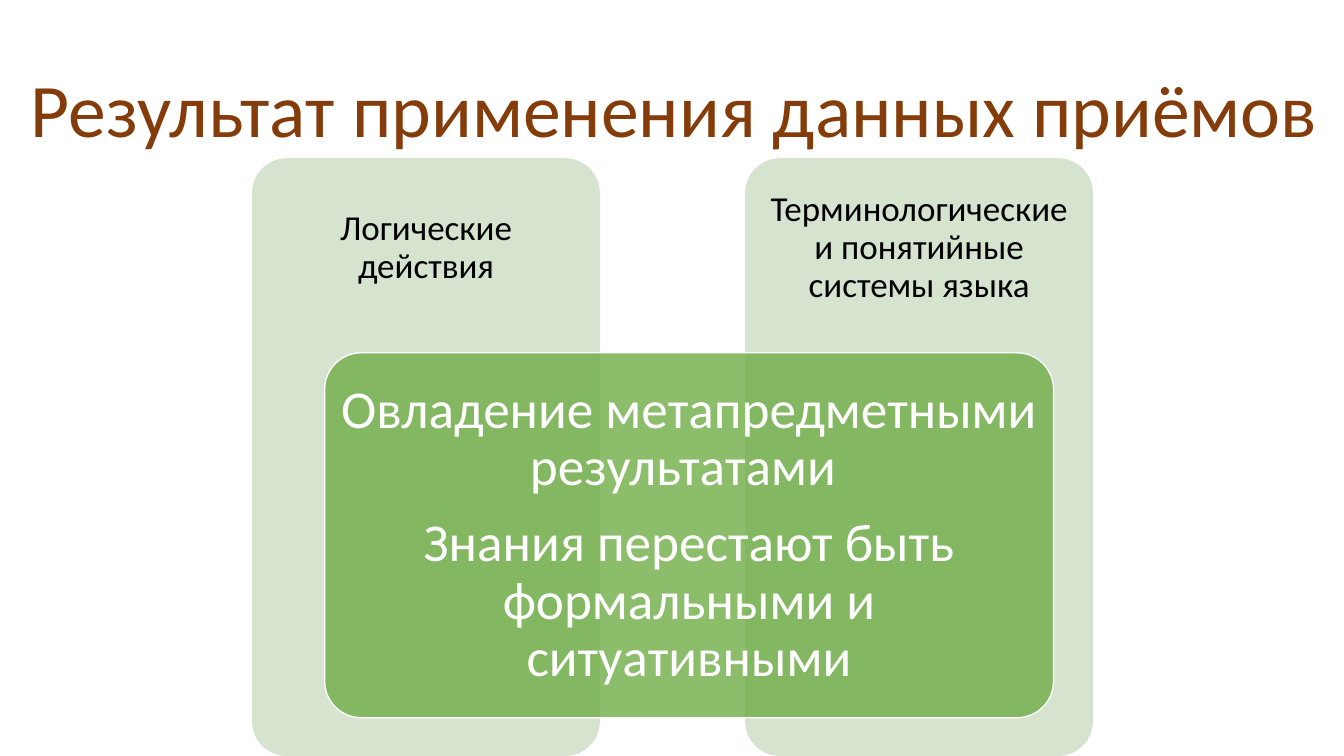
from dataclasses import dataclass

from lxml import etree
from pptx import Presentation
from pptx.dml.color import RGBColor
from pptx.enum.shapes import MSO_SHAPE
from pptx.enum.text import MSO_ANCHOR, MSO_AUTO_SIZE, PP_ALIGN
from pptx.oxml.ns import qn
from pptx.shapes.autoshape import Shape
from pptx.slide import Slide
from pptx.text.text import TextFrame
from pptx.util import Inches, Pt

ROUND = MSO_SHAPE.ROUNDED_RECTANGLE
MIDDLE = MSO_ANCHOR.MIDDLE
CENTER = PP_ALIGN.CENTER
NO_FIT = MSO_AUTO_SIZE.NONE
TITLE_ONLY = 5

FONT = "Calibri"
BROWN, BLACK, WHITE = "843C0B", "000000", "FFFFFF"
PALE, GREEN = "D5E3CF", "70AD47"
TOP, WIDTH, HEIGHT = 1.57, 3.45, 5.93
HEAD = 1.78


@dataclass
class Column:
    left: float
    label: str


COLUMNS = [
    Column(7.39, "Терминологические и понятийные системы языка"),
    Column(2.5, "Логические действия"),
]
RESULTS = [
    "Овладение метапредметными результатами ",
    "Знания перестают быть формальными и ситуативными",
]


def paint(color, code: str) -> None:
    color.rgb = RGBColor.from_string(code)


def write(frame: TextFrame, lines: list[str], size: float, code: str,
          inset: float, wrap: bool = True, pitch: float = 0.9) -> None:
    """Fill a frame with centred paragraphs, spaced by 35% of the size."""
    frame.auto_size = NO_FIT
    frame.word_wrap = wrap
    frame.vertical_anchor = MIDDLE
    frame.margin_left = frame.margin_right = Inches(inset)
    frame.margin_top = frame.margin_bottom = Inches(inset)
    frame.text = "\n".join(lines)
    for i, para in enumerate(frame.paragraphs):
        para.alignment = CENTER
        para.line_spacing = pitch
        para.space_before = Pt(0)
        para.space_after = Pt(size * 0.35 if i < len(lines) - 1 else 0)
        for run in para.runs:
            run.font.name = FONT
            run.font.size = Pt(size)
            paint(run.font.color, code)


def add_card(slide: Slide, left: float, top: float, width: float,
             height: float, fill: str) -> Shape:
    card = slide.shapes.add_shape(ROUND, Inches(left), Inches(top),
                                  Inches(width), Inches(height))
    card.adjustments[0] = 0.1
    card.shadow.inherit = False
    card.fill.solid()
    paint(card.fill.fore_color, fill)
    card.line.fill.background()
    return card


def add_column(slide: Slide, column: Column) -> None:
    add_card(slide, column.left, TOP, WIDTH, HEIGHT, PALE)
    label = slide.shapes.add_textbox(Inches(column.left), Inches(TOP),
                                     Inches(WIDTH), Inches(HEAD))
    write(label.text_frame, [column.label], 25, BLACK, 0.19)


def add_panel(slide: Slide) -> None:
    panel = add_card(slide, 3.22, 3.5, 7.23, 3.62, GREEN)
    fill = panel.fill._xPr.find(qn("a:solidFill"))
    etree.SubElement(fill[0], qn("a:alpha"), val="80000")
    paint(panel.line.color, WHITE)
    panel.line.width = Pt(1)
    write(panel.text_frame, RESULTS, 38, WHITE, 0.03)


def set_title(slide: Slide) -> None:
    title = slide.shapes.title
    title.left, title.top = Inches(0.14), Inches(0.56)
    title.width, title.height = Inches(13.09), Inches(1.01)
    write(title.text_frame, ["Результат применения данных приёмов"],
          54, BROWN, 0.05, wrap=False, pitch=1.0)


def main() -> None:
    deck = Presentation()
    deck.slide_width, deck.slide_height = Inches(13.33), Inches(7.5)
    slide = deck.slides.add_slide(deck.slide_layouts[TITLE_ONLY])
    for column in COLUMNS:
        add_column(slide, column)
    add_panel(slide)
    set_title(slide)
    deck.save("out.pptx")


if __name__ == "__main__":
    main()
